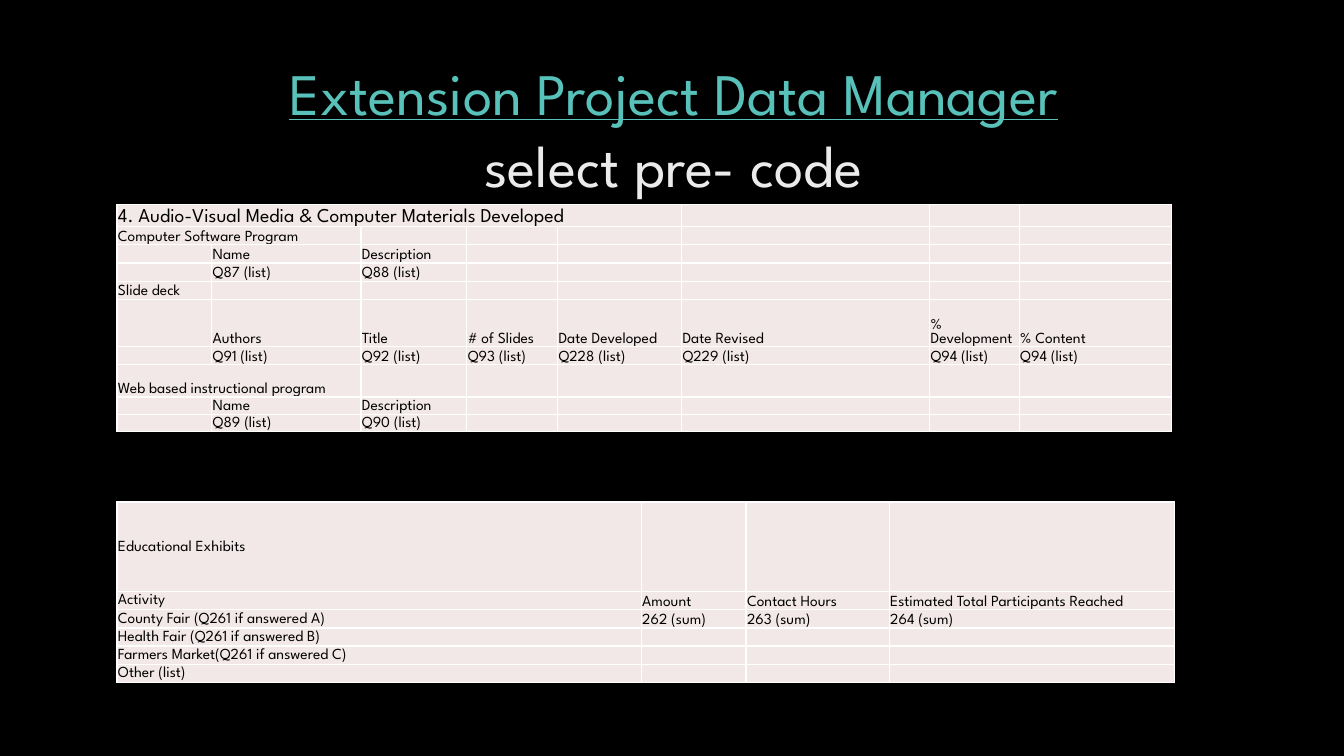
from lxml.etree import SubElement
from pptx import Presentation
from pptx.dml.color import RGBColor
from pptx.enum.text import MSO_ANCHOR as Anchor, PP_ALIGN as Align
from pptx.oxml.ns import qn
from pptx.util import Inches, Pt

FONT = "League Spartan"
BLACK, WHITE, CELL_FILL = "000000", "FFFFFF", "F2E8E7"
BODY_SIZE = 11

TITLE_LINES = [
    ("Extension Project Data Manager", "58C1BA", True),
    ("select pre- code", "EBEBEB", False),
]

# Rows are filled up to the full column count with empty cells.
MATERIALS = {
    "left": 1.16, "top": 2.03,
    "columns": [0.94, 1.48, 1.05, 0.9, 1.23, 2.46, 0.89, 1.51],
    "heights": [0.22] + [0.18] * 4 + [0.47, 0.18, 0.32, 0.17, 0.17],
    "rows": [
        ["4. Audio-Visual Media & Computer Materials Developed"],
        ["Computer Software Program"],
        ["", "Name", "Description"],
        ["", "Q87 (list)", "Q88 (list)"],
        ["Slide deck"],
        ["", "Authors", "Title", "# of Slides", "Date Developed",
         "Date Revised", "% Development", "% Content"],
        ["", "Q91 (list)", "Q92 (list)", "Q93 (list)", "Q228 (list)",
         "Q229 (list)", "Q94 (list)", "Q94 (list)"],
        ["Web based instructional program"],
        ["", "Name", "Description"],
        ["", "Q89 (list)", "Q90 (list)"],
    ],
    "spans": {0: 5, 1: 2, 7: 2},  # row: columns merged from the left
    "heading_size": 14,
    "first_anchor": Anchor.BOTTOM,
}
EXHIBITS = {
    "left": 1.16, "top": 4.98,
    "columns": [5.2, 1.04, 1.42, 2.83],
    "heights": [0.89] + [0.18] * 5,
    "rows": [
        ["Educational Exhibits"],
        ["Activity", "Amount", "Contact Hours",
         "Estimated Total Participants Reached"],
        ["County Fair (Q261 if answered A)", "262 (sum)", "263 (sum)",
         "264 (sum)"],
        ["Health Fair (Q261 if answered B)"],
        ["Farmers Market(Q261 if answered C)"],
        ["Other (list)"],
    ],
    "spans": {},
    "heading_size": BODY_SIZE,
    "first_anchor": Anchor.MIDDLE,
}


def rgb(color):
    return RGBColor.from_string(color)


def add_text(paragraph, text, size=BODY_SIZE, color=BLACK, underline=False):
    run = paragraph.add_run()
    run.text = text
    run.font.name = FONT
    run.font.size = Pt(size)
    run.font.underline = underline
    run.font.color.rgb = rgb(color)


def set_empty_size(paragraph, size=BODY_SIZE):
    """Keep an empty cell from stretching its row."""
    end = SubElement(paragraph._p, qn("a:endParaRPr"), sz=str(size * 100))
    SubElement(end, qn("a:latin"), typeface=FONT)


def add_borders(cell, color=WHITE, width=1):
    properties = cell._tc.get_or_add_tcPr()
    for side in ("lnL", "lnR", "lnT", "lnB"):
        line = SubElement(properties, qn(f"a:{side}"), w=str(Pt(width)))
        fill = SubElement(line, qn("a:solidFill"))
        SubElement(fill, qn("a:srgbClr"), val=color)


def format_cell(cell, text, size, anchor):
    cell.margin_left = cell.margin_right = cell.margin_top = Inches(0.01)
    cell.margin_bottom = 0
    cell.vertical_anchor = anchor
    add_borders(cell)
    cell.fill.solid()
    cell.fill.fore_color.rgb = rgb(CELL_FILL)
    paragraph = cell.text_frame.paragraphs[0]
    if text:
        add_text(paragraph, text, size=size)
    else:
        set_empty_size(paragraph)


def add_list_table(slide, content):
    columns, heights = content["columns"], content["heights"]
    table = slide.shapes.add_table(
        len(heights), len(columns),
        Inches(content["left"]), Inches(content["top"]),
        Inches(sum(columns)), Inches(sum(heights))).table
    table.first_row = table.horz_banding = False
    for column, width in zip(table.columns, columns):
        column.width = Inches(width)
    for row_index, texts in enumerate(content["rows"]):
        table.rows[row_index].height = Inches(heights[row_index])
        size = BODY_SIZE if row_index else content["heading_size"]
        for column_index in range(len(columns)):
            text = texts[column_index] if column_index < len(texts) else ""
            anchor = Anchor.BOTTOM if column_index else content["first_anchor"]
            format_cell(table.cell(row_index, column_index), text, size, anchor)
    for row_index, span in content["spans"].items():
        table.cell(row_index, 0).merge(table.cell(row_index, span - 1))


def add_title(slide):
    title = slide.shapes.title
    title.left, title.top = Inches(0.71), Inches(0.5)
    title.width, title.height = Inches(11.94), Inches(1.53)
    frame = title.text_frame
    frame.word_wrap = True
    frame.vertical_anchor = Anchor.MIDDLE
    paragraph = frame.paragraphs[0]
    paragraph.alignment = Align.CENTER
    paragraph.line_spacing = Pt(51)
    for index, (text, color, underline) in enumerate(TITLE_LINES):
        if index:
            paragraph.add_line_break()
        add_text(paragraph, text, size=42, color=color, underline=underline)


def main():
    presentation = Presentation()
    presentation.slide_width = Inches(13.33)
    presentation.slide_height = Inches(7.5)
    slide = presentation.slides.add_slide(presentation.slide_layouts[5])
    slide.background.fill.solid()
    slide.background.fill.fore_color.rgb = rgb(BLACK)
    add_title(slide)
    for content in (EXHIBITS, MATERIALS):
        add_list_table(slide, content)
    presentation.save("out.pptx")


if __name__ == "__main__":
    main()
